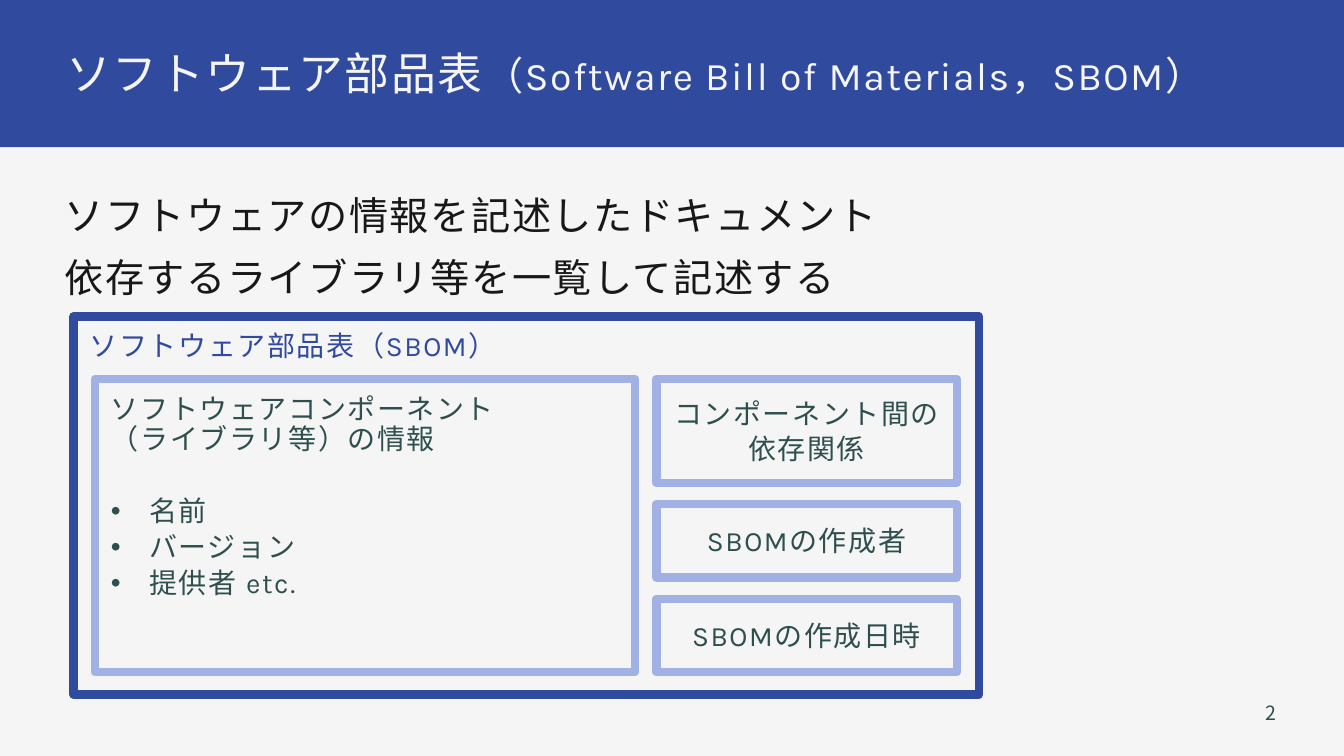
from dataclasses import dataclass

from lxml import etree
from pptx import Presentation
from pptx import util as u
from pptx.dml import color
from pptx.enum import shapes, text
from pptx.oxml import ns

NAVY, PERIWINKLE, SLATE, INK, PAPER = "304A9E", "A2B1E3", "2F4F4F", "181818", "F5F5F5"
LEFT, CENTER = text.PP_ALIGN.LEFT, text.PP_ALIGN.CENTER
TOP, MIDDLE = text.MSO_ANCHOR.TOP, text.MSO_ANCHOR.MIDDLE


@dataclass
class Panel:
    left: float
    top: float
    width: float
    height: float
    lines: list[str]
    outline: str = PERIWINKLE
    ink: str = SLATE
    centered: bool = True


def rgb(value: str) -> color.RGBColor:
    return color.RGBColor.from_string(value)


def place(shape, left: float, top: float, width: float, height: float) -> None:
    shape.left, shape.top = u.Inches(left), u.Inches(top)
    shape.width, shape.height = u.Inches(width), u.Inches(height)


def set_frame(frame, insets: tuple, anchor=TOP) -> None:
    frame.word_wrap = True
    frame.auto_size = text.MSO_AUTO_SIZE.NONE
    frame.vertical_anchor = anchor
    (frame.margin_left, frame.margin_top,
     frame.margin_right, frame.margin_bottom) = map(u.Inches, insets)


def style_run(run, size: float, ink: str, typeface: str = "Karla", tracking: int = 110) -> None:
    run.font.size = u.Pt(size)
    run.font.name = typeface
    run.font.color.rgb = rgb(ink)
    properties = run.font._element
    properties.set("spc", str(tracking))
    etree.SubElement(properties, ns.qn("a:ea")).set("typeface", typeface)


def style_paragraph(paragraph, size: float, ink: str, before: float,
                    after: float = 0, align=LEFT) -> None:
    paragraph.alignment = align
    paragraph.line_spacing = 0.9
    paragraph.space_before, paragraph.space_after = u.Pt(before), u.Pt(after)
    for run in paragraph.runs:
        style_run(run, size, ink)


def add_bullet(paragraph) -> None:
    properties = paragraph._p.get_or_add_pPr()
    indent = u.Inches(0.38)
    properties.set("marL", str(indent))
    properties.set("indent", str(-indent))
    etree.SubElement(properties, ns.qn("a:buFont")).set("typeface", "Arial")
    etree.SubElement(properties, ns.qn("a:buChar")).set("char", "•")


def add_rectangle(slide, left: float, top: float, width: float, height: float):
    box = slide.shapes.add_shape(shapes.MSO_SHAPE.RECTANGLE, 0, 0, 0, 0)
    place(box, left, top, width, height)
    box.shadow.inherit = False
    return box


def add_panel(slide, panel: Panel):
    box = add_rectangle(slide, panel.left, panel.top, panel.width, panel.height)
    box.fill.background()
    box.line.color.rgb = rgb(panel.outline)
    box.line.width = u.Pt(6)
    etree.SubElement(box.line._ln, ns.qn("a:round"))
    if panel.centered:
        set_frame(box.text_frame, (0.08, 0.12, 0.08, 0.08), MIDDLE)
    else:
        set_frame(box.text_frame, (0.16, 0.16, 0.08, 0.08))
    box.text_frame.text = "\n".join(panel.lines)
    for paragraph in box.text_frame.paragraphs:
        style_paragraph(paragraph, 20, panel.ink, 3, 1, CENTER if panel.centered else LEFT)
    return box


def add_header(slide) -> None:
    band = add_rectangle(slide, 0, 0, 13.33, 1.46)
    band.fill.solid()
    band.fill.fore_color.rgb = rgb(NAVY)
    band.line.fill.background()
    title = slide.shapes.title
    slide.shapes._spTree.append(title._element)
    place(title, 0.58, 0.43, 12.18, 0.59)
    set_frame(title.text_frame, (0.08, 0.08, 0.08, 0.06))
    title.text_frame.text = "ソフトウェア部品表"
    heading = title.text_frame.paragraphs[0]
    style_paragraph(heading, 32, PAPER, 16)
    english = heading.add_run()
    english.text = "（Software Bill of Materials，SBOM）"
    style_run(english, 28, PAPER)


def add_summary(slide) -> None:
    summary = slide.shapes.add_textbox(0, 0, 0, 0)
    place(summary, 0.58, 1.89, 12.18, 1.2)
    set_frame(summary.text_frame, (0.06, 0.06, 0.06, 0.06))
    summary.text_frame.text = (
        "ソフトウェアの情報を記述したドキュメント\n依存するライブラリ等を一覧して記述する")
    for paragraph in summary.text_frame.paragraphs:
        style_paragraph(paragraph, 28, INK, 14)


def add_page_number(slide) -> None:
    number = slide.shapes.add_textbox(0, 0, 0, 0)
    place(number, 11.08, 6.9, 1.68, 0.32)
    set_frame(number.text_frame, (0.1, 0.05, 0.1, 0.05))
    number.text_frame.text = "2"
    paragraph = number.text_frame.paragraphs[0]
    paragraph.alignment = text.PP_ALIGN.RIGHT
    style_run(paragraph.runs[0], 14, SLATE, "Noto Sans CJK JP", 0)


def add_sbom(slide) -> None:
    add_panel(slide, Panel(0.73, 3.14, 8.98, 3.75, ["ソフトウェア部品表（SBOM）"],
                           NAVY, NAVY, False))
    component = add_panel(slide, Panel(
        0.94, 3.76, 5.36, 2.91,
        ["ソフトウェアコンポーネント\v（ライブラリ等）の情報", "名前", "バージョン", "提供者 etc."],
        centered=False))
    fields = component.text_frame.paragraphs[1:]
    for field in fields:
        add_bullet(field)
    fields[0].space_before = u.Pt(29)

    top, gap = 3.76, 0.21
    for height, lines in (
        (1.03, ["コンポーネント間の", "依存関係"]),
        (0.73, ["SBOMの作成者"]),
        (0.73, ["SBOMの作成日時"]),
    ):
        add_panel(slide, Panel(6.51, top, 2.98, height, lines))
        top += height + gap


def main() -> None:
    deck = Presentation()
    deck.slide_width, deck.slide_height = u.Inches(13.33), u.Inches(7.5)
    slide = deck.slides.add_slide(deck.slide_layouts[5])
    slide.background.fill.solid()
    slide.background.fill.fore_color.rgb = rgb(PAPER)
    add_header(slide)
    add_summary(slide)
    add_page_number(slide)
    add_sbom(slide)
    deck.save("out.pptx")


if __name__ == "__main__":
    main()
